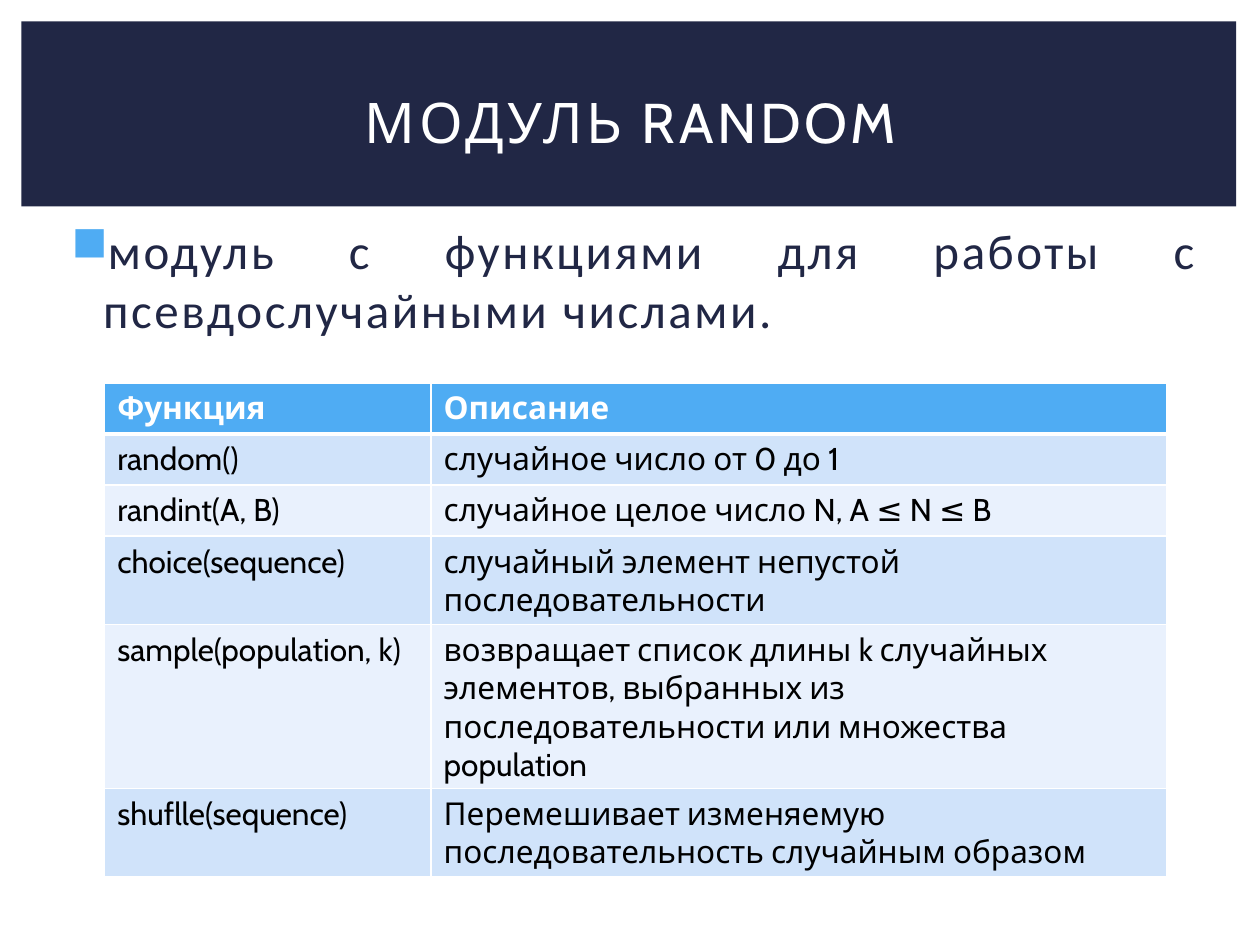
from dataclasses import dataclass
from lxml.etree import SubElement
from pptx import Presentation
from pptx.dml.color import RGBColor
from pptx.enum.shapes import MSO_SHAPE
from pptx.enum.text import MSO_ANCHOR, PP_ALIGN
from pptx.oxml.ns import qn
from pptx.util import Cm, Pt

TITLE = "МОДУЛЬ RANDOM"
INTRO = "модуль с функциями для работы с псевдослучайными числами."
ROWS = [
    ("Функция", "Описание"),
    ("random()", "случайное число от 0 до 1"),
    ("randint(A, B)", "случайное целое число N, A ≤ N ≤ B"),
    ("choice(sequence)", "случайный элемент непустой последовательности"),
    ("sample(population, k)", "возвращает список длины k случайных элементов, "
     "выбранных из последовательности или множества population"),
    ("shuflle(sequence)", "Перемешивает изменяемую последовательность случайным образом"),
]
COL_WIDTHS = (6.58, 14.83)
ROW_HEIGHT = 1.03


@dataclass(frozen=True)
class Theme:
    navy: str = "212745"
    blue: str = "4FACF3"
    bands: tuple = ("E9F1FD", "D0E3FA")
    white: str = "FFFFFF"
    black: str = "000000"
    head_font: str = "Cabin"
    body_font: str = "Calibri"
    title_size: int = 32
    intro_size: int = 28
    cell_size: int = 18


T = Theme()


def rgb(value):
    return RGBColor.from_string(value)


def add_run(p, text, font, size, color, bold=False, spacing=0):
    r = p.add_run()
    r.text = text
    r.font.name, r.font.size, r.font.bold = font, Pt(size), bold
    r.font.color.rgb = rgb(color)
    if spacing:
        r.font._element.set("spc", str(int(spacing * 100)))


def add_text(s, box, anchor, align):
    tf = s.shapes.add_textbox(*map(Cm, box)).text_frame
    tf.word_wrap, tf.vertical_anchor = True, anchor
    p = tf.paragraphs[0]
    p.alignment = align
    return p


def add_bullet(p, char, color, left, hanging):
    pPr = p._p.get_or_add_pPr()
    pPr.set("marL", str(Cm(left)))
    pPr.set("indent", str(-Cm(hanging)))
    SubElement(SubElement(pPr, qn("a:buClr")), qn("a:srgbClr"), val=color)
    SubElement(pPr, qn("a:buChar"), char=char)


def add_borders(cell, color, widths):
    tcPr = cell._tc.get_or_add_tcPr()
    for side, width in zip("LRTB", widths):
        ln = SubElement(tcPr, qn(f"a:ln{side}"), w=str(Pt(width)))
        SubElement(SubElement(ln, qn("a:solidFill")), qn("a:srgbClr"), val=color)


def add_function_table(s, left, top):
    frame = s.shapes.add_table(len(ROWS), len(COL_WIDTHS), Cm(left), Cm(top),
                               Cm(sum(COL_WIDTHS)), Cm(ROW_HEIGHT * len(ROWS)))
    table = frame.table
    for col, width in zip(table.columns, COL_WIDTHS):
        col.width = Cm(width)
    for i, row in enumerate(ROWS):
        header = i == 0
        for j, text in enumerate(row):
            cell = table.cell(i, j)
            add_borders(cell, T.white, (1, 1, 3 if i == 1 else 1, 3 if header else 1))
            cell.fill.solid()
            cell.fill.fore_color.rgb = rgb(T.blue if header else T.bands[i % 2])
            add_run(cell.text_frame.paragraphs[0], text, T.head_font, T.cell_size,
                    T.white if header else T.black, header)


def main():
    """Build the slide about the random module."""
    prs = Presentation()
    prs.slide_width, prs.slide_height = Cm(25.4), Cm(19.05)
    s = prs.slides.add_slide(prs.slide_layouts[6])

    band = s.shapes.add_shape(MSO_SHAPE.RECTANGLE, *map(Cm, (0.43, 0.43, 24.49, 3.73)))
    band.shadow.inherit = False
    band.fill.solid()
    band.fill.fore_color.rgb = rgb(T.navy)
    band.line.fill.background()

    p = add_text(s, (1.07, 0.99, 23.29, 2.92), MSO_ANCHOR.MIDDLE, PP_ALIGN.CENTER)
    add_run(p, TITLE, T.head_font, T.title_size, T.white, spacing=2)

    p = add_text(s, (1.07, 4.32, 23.34, 12.7), MSO_ANCHOR.TOP, PP_ALIGN.JUSTIFY)
    p.space_before = Pt(2)
    add_bullet(p, "■", T.blue, 0.76, 0.64)
    add_run(p, INTRO, T.body_font, T.intro_size, T.navy, spacing=1.5)

    add_function_table(s, 2.11, 7.72)
    prs.save("out.pptx")


if __name__ == "__main__":
    main()
